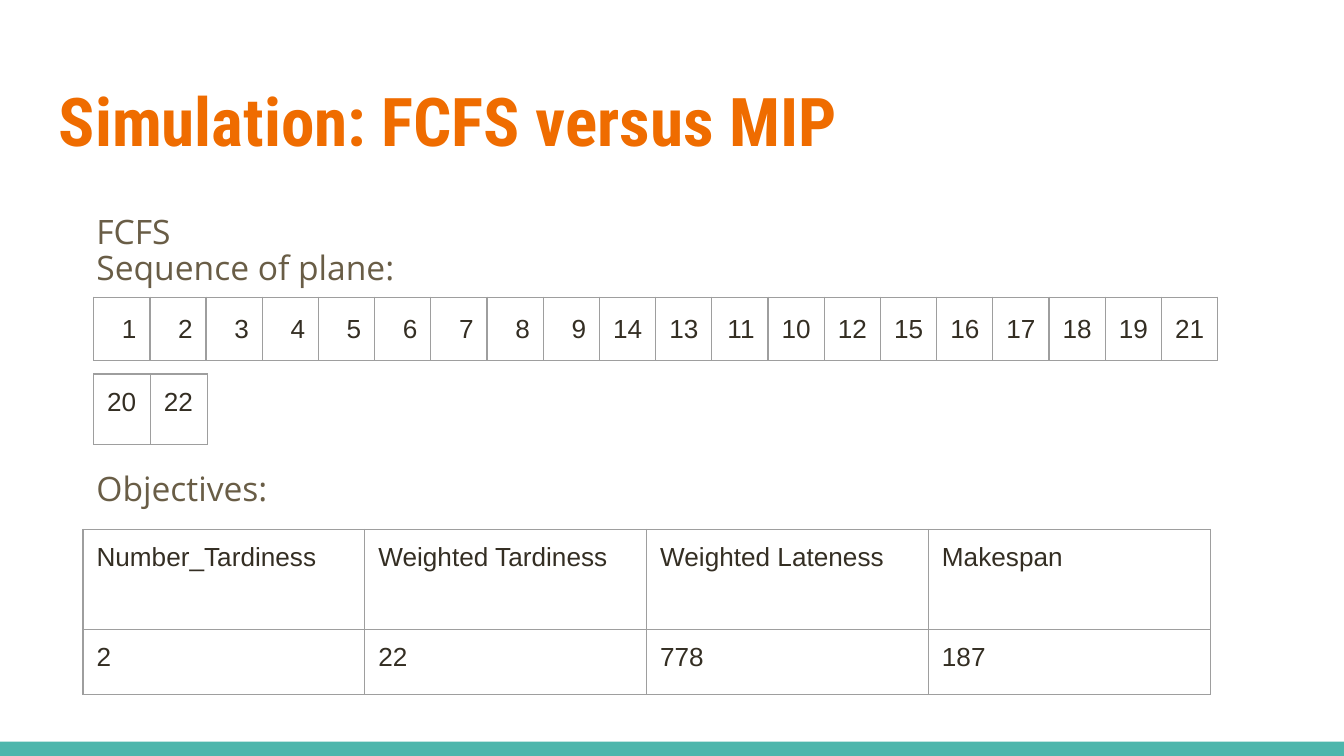
from dataclasses import dataclass

from lxml.etree import SubElement
from pptx import Presentation
from pptx.dml.color import RGBColor
from pptx.enum.shapes import MSO_SHAPE
from pptx.enum.text import PP_ALIGN
from pptx.oxml.ns import qn
from pptx.slide import Slide
from pptx.table import _Cell
from pptx.text.text import TextFrame, _Paragraph
from pptx.util import Pt

ORANGE = RGBColor(0xEF, 0x6C, 0x00)
TEAL = RGBColor(0x4D, 0xB6, 0xAC)
BROWN = RGBColor(0x69, 0x5D, 0x46)
DARK = RGBColor(0x34, 0x2E, 0x23)
GRID = RGBColor(0x9E, 0x9E, 0x9E)

INSET = Pt(7.2)
BORDER_SIDES = ("a:lnL", "a:lnR", "a:lnT", "a:lnB")


@dataclass
class GridTable:
    left: float
    top: float
    column_width: float
    row_heights: list[float]
    rows: list[list[str]]
    alignment: PP_ALIGN = PP_ALIGN.LEFT
    line_spacing: float = 1.0


def format_runs(paragraph: _Paragraph, font_name: str, size: float,
                color: RGBColor, bold: bool = False) -> None:
    for run in paragraph.runs:
        run.font.name = font_name
        run.font.size = Pt(size)
        run.font.color.rgb = color
        run.font.bold = bold


def add_text_box(slide: Slide, left: float, top: float,
                 width: float, height: float, text: str) -> TextFrame:
    box = slide.shapes.add_textbox(Pt(left), Pt(top), Pt(width), Pt(height))
    text_frame = box.text_frame
    text_frame.word_wrap = True
    text_frame.margin_left = text_frame.margin_right = INSET
    text_frame.margin_top = text_frame.margin_bottom = INSET
    text_frame.text = text
    return text_frame


def set_borders(cell: _Cell) -> None:
    properties = cell._tc.get_or_add_tcPr()
    for position, side in enumerate(BORDER_SIDES):
        line = SubElement(properties, qn(side), w=str(Pt(0.75)))
        fill = SubElement(line, qn("a:solidFill"))
        SubElement(fill, qn("a:srgbClr"), val=str(GRID))
        properties.insert(position, line)


def add_grid_table(slide: Slide, grid: GridTable) -> None:
    column_count = len(grid.rows[0])
    frame = slide.shapes.add_table(
        len(grid.rows), column_count, Pt(grid.left), Pt(grid.top),
        Pt(grid.column_width * column_count), Pt(sum(grid.row_heights)))
    table = frame.table
    table.first_row = table.horz_banding = False
    for column in table.columns:
        column.width = Pt(grid.column_width)
    for row_index, values in enumerate(grid.rows):
        table.rows[row_index].height = Pt(grid.row_heights[row_index])
        for column_index, value in enumerate(values):
            cell = table.cell(row_index, column_index)
            cell.margin_left = cell.margin_right = INSET
            cell.margin_top = cell.margin_bottom = INSET
            cell.fill.background()
            set_borders(cell)
            cell.text_frame.text = value
            paragraph = cell.text_frame.paragraphs[0]
            paragraph.alignment = grid.alignment
            paragraph.line_spacing = grid.line_spacing
            format_runs(paragraph, "Arial", 14, DARK)


def main() -> None:
    presentation = Presentation()
    presentation.slide_width = Pt(720)
    presentation.slide_height = Pt(405)
    slide = presentation.slides.add_slide(presentation.slide_layouts[6])

    # Bottom band
    band = slide.shapes.add_shape(MSO_SHAPE.RECTANGLE, Pt(0), Pt(397.4), Pt(720), Pt(7.6))
    band.shadow.inherit = False
    band.fill.solid()
    band.fill.fore_color.rgb = TEAL
    band.line.fill.background()

    # Title
    title = add_text_box(slide, 24.5, 35.5, 671, 55.4, "Simulation: FCFS versus MIP")
    format_runs(title.paragraphs[0], "Roboto Condensed", 36, ORANGE, bold=True)

    # Section labels, with room for the sequence tables before the last one
    labels = add_text_box(slide, 44.6, 108, 615, 249,
                          "FCFS\nSequence of plane:\nObjectives:")
    for paragraph in labels.paragraphs:
        paragraph.line_spacing = 0.9
        format_runs(paragraph, "Open Sans", 18, BROWN)
    labels.paragraphs[-1].space_before = Pt(99)

    # Plane sequence and objective tables
    sequence = [*range(1, 10), 14, 13, 11, 10, 12, *range(15, 20), 21]
    tables = [
        GridTable(50.2, 159.2, 30.13, [32.7], [[str(plane) for plane in sequence]],
                  PP_ALIGN.RIGHT, 1.15),
        GridTable(50.2, 200.4, 30.4, [37.8], [["20", "22"]]),
        GridTable(44.5, 283.6, 151, [53.5, 34.8], [
            ["Number_Tardiness", "Weighted Tardiness", "Weighted Lateness", "Makespan"],
            ["2", "22", "778", "187"],
        ]),
    ]
    for grid in tables:
        add_grid_table(slide, grid)

    presentation.save("out.pptx")


if __name__ == "__main__":
    main()
